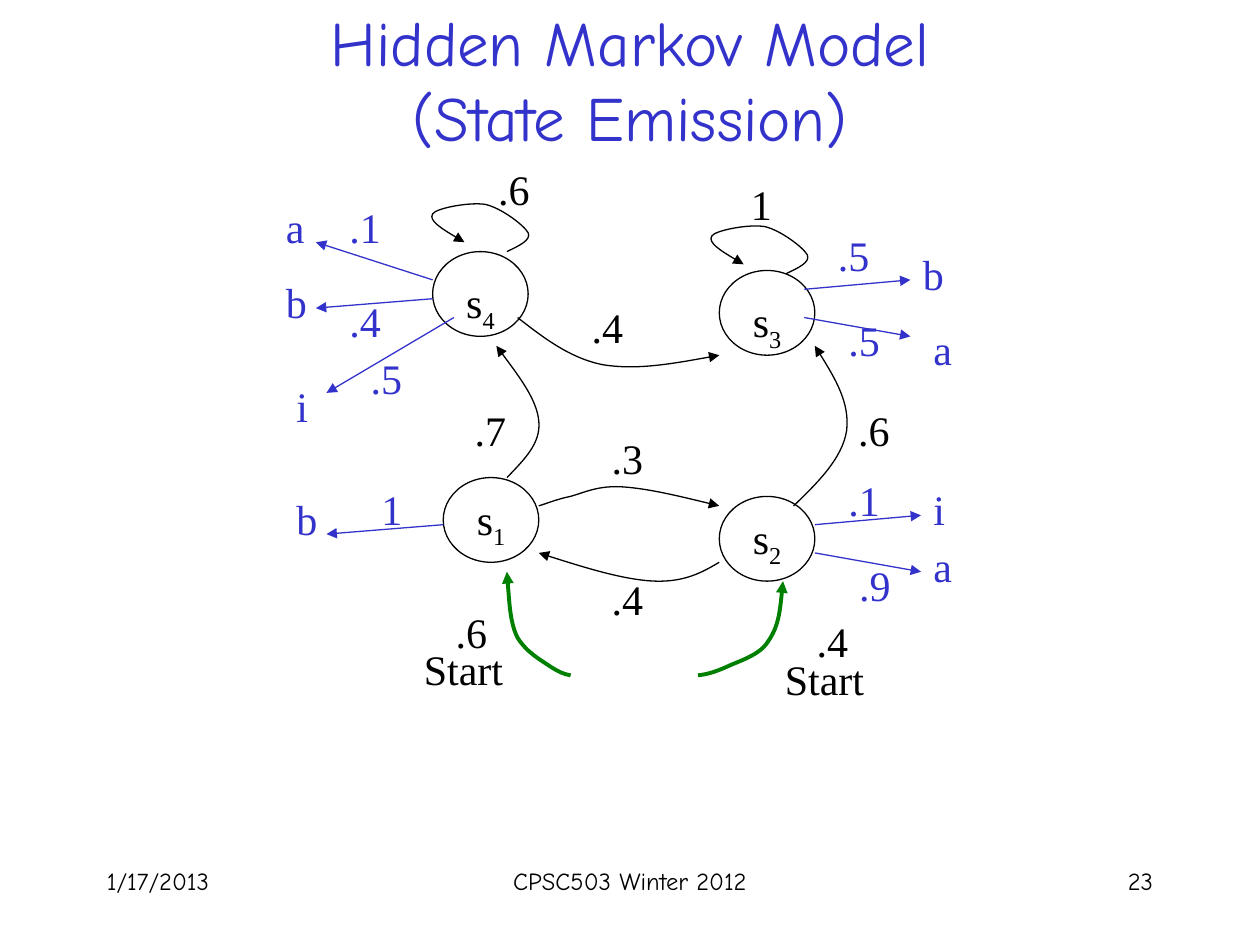
from lxml import etree
from pptx import Presentation
from pptx.dml.color import RGBColor
from pptx.enum import shapes, text
from pptx.oxml.ns import qn
from pptx.util import Inches, Pt

BLACK = RGBColor(0x00, 0x00, 0x00)
BLUE = RGBColor(0x33, 0x33, 0xCC)
GREEN = RGBColor(0x00, 0x80, 0x00)
WIDTH, HEIGHT = Inches(10), Inches(7.5)

# The diagram lies on a fine grid; all its positions are (column, row).
LEFT, TOP = Inches(2.17), Inches(1.25)
COLUMN, ROW = Inches(5.14) / 61, Inches(4.11) / 55
STATE_SPAN = 9
LABEL_WIDTHS = {"a": 0.35, "b": 0.37, "i": 0.3, "1": 0.37, "Start": 0.84}

# Number, ellipse corner, label corner
STATES = [
    ("4", (15, 10), (17, 12)),
    ("3", (42, 12), (44, 14)),
    ("1", (16, 34), (18, 35)),
    ("2", (42, 36), (44, 37)),
]

SELF_LOOP = [(22, 10), (23.1, 9.4), (24.3, 8.8), (24, 8), (23.6, 7.2),
             (21.5, 5.4), (20, 5), (18.5, 4.7), (15.3, 5.4), (15, 6),
             (14.6, 6.7), (16.3, 7.9), (18, 9)]

# Probability, label corner, start point and Bezier points
TRANSITIONS = [
    (".6", (20, 0), SELF_LOOP),
    ("1", (43.8, 1.6), [(x + 26.3, y + 2.35) for x, y in SELF_LOOP]),
    (".7", (17.8, 25.6), [(22, 34), (23.6, 32.1), (25.2, 30.4), (25, 28),
                          (24.8, 25.7), (22.9, 22.9), (21, 20)]),
    (".4", (28.8, 14.6), [(23, 17), (25.4, 19.1), (27.9, 21.3), (31, 22),
                          (34.2, 22.6), (38.1, 21.8), (42, 21)]),
    (".6", (53.9, 25.6), [(49, 37), (51.4, 34.4), (53.6, 31.9), (54, 29),
                          (54.3, 26.1), (52.7, 23), (51, 20)]),
    (".3", (30.7, 28.5), [(25, 37), (25.9, 36.7), (26.7, 36.3), (28, 36),
                          (29.3, 35.6), (30.6, 34.8), (33, 35),
                          (35.4, 35.2), (38.7, 36.1), (42, 37)]),
    (".4", (30.7, 43.5), [(42, 43), (40.5, 44), (38.8, 45.1), (36, 45),
                          (33.2, 44.9), (29.1, 43.5), (25, 42)]),
]

# Probability, its corner, corner of "Start", start point and Bezier points
STARTS = [
    (".6", (16, 47), (13, 51),
     [(28, 55), (27.4, 54.9), (26.8, 54.6), (26, 54), (25.1, 53.3),
      (23.9, 52.6), (23, 51), (22.3, 49.4), (22.2, 46.7), (22, 44)]),
    (".4", (50, 48), (47, 52),
     [(40, 55), (40.8, 54.9), (41.5, 54.7), (42.7, 54.1), (43.8, 53.5),
      (45.8, 52.9), (46.6, 51.4), (47.6, 49.8), (47.8, 47.4), (48, 45)]),
]

# Symbol, its corner, probability, its corner, arrow start, arrow end
EMISSIONS = [
    ("a", (0, 4), ".1", (6, 4), (15, 13), (4, 9)),
    ("b", (0, 12), ".4", (6, 14), (15, 15), (4, 16)),
    ("i", (1, 23), ".5", (8, 20), (17, 17), (5, 25)),
    ("b", (60, 9), ".5", (52, 7), (50, 14), (60, 13)),
    ("a", (61, 17), ".5", (53, 16), (50, 17), (60, 19)),
    ("b", (1, 35), "1", (9, 34), (16, 39), (5, 40)),
    ("i", (61, 34), ".1", (53, 33), (51, 39), (61, 38)),
    ("a", (61, 40), ".9", (54, 42), (51, 42), (61, 44)),
]

# Text, left share, width share, alignment
FOOTERS = [
    ("1/17/2013", 0.075, 0.21, text.PP_ALIGN.LEFT),
    ("CPSC503 Winter 2012", 0.34, 0.32, text.PP_ALIGN.CENTER),
    ("23", 0.715, 0.21, text.PP_ALIGN.RIGHT),
]


def grid_point(cell):
    column, row = cell
    return round(LEFT + column * COLUMN), round(TOP + row * ROW)


class DiagramPage:
    heading_font = "Comic Neue"
    label_font = "Times New Roman"
    thin, thick = Pt(0.75), Pt(2.25)

    def __init__(self, deck):
        self.page = deck.slides.add_slide(deck.slide_layouts[5])
        self.items = self.page.shapes

    def format_text(self, frame, font, size, color, align):
        for para in frame.paragraphs:
            para.alignment = align
            for span in para.runs:
                span.font.name, span.font.size = font, Pt(size)
                span.font.color.rgb = color

    def title(self, words):
        box = self.items.title
        box.left, box.top = round(0.075 * WIDTH), 0
        box.width, box.height = round(0.85 * WIDTH), round(HEIGHT / 6)
        frame = box.text_frame
        frame.text = words
        frame.auto_size = text.MSO_AUTO_SIZE.NONE
        frame.vertical_anchor = text.MSO_ANCHOR.MIDDLE
        self.format_text(frame, self.heading_font, 36, BLUE,
                         text.PP_ALIGN.CENTER)

    def footer(self, words, left, width, align):
        box = self.items.add_textbox(
            round(left * WIDTH), round(0.91 * HEIGHT),
            round(width * WIDTH), Inches(0.5))
        box.text_frame.word_wrap = True
        box.text_frame.text = words
        self.format_text(box.text_frame, self.heading_font, 14, BLACK, align)

    def label(self, words, cell, color=BLACK, subscript=""):
        width = Inches(LABEL_WIDTHS.get(words, 0.46))
        box = self.items.add_textbox(*grid_point(cell), width, Inches(0.45))
        frame = box.text_frame
        frame.word_wrap = False
        frame.text = words
        if subscript:
            span = frame.paragraphs[0].add_run()
            span.text = subscript
            span._r.get_or_add_rPr().set("baseline", "-25000")
        self.format_text(frame, self.label_font, 24, color,
                         text.PP_ALIGN.LEFT)

    def state(self, number, cell, label_cell):
        circle = self.items.add_shape(
            shapes.MSO_SHAPE.OVAL, *grid_point(cell),
            round(STATE_SPAN * COLUMN), round(STATE_SPAN * ROW))
        circle.shadow.inherit = False
        circle.fill.background()
        circle.line.color.rgb, circle.line.width = BLACK, self.thin
        self.label("s", label_cell, subscript=number)

    def arrowhead(self, line, color, width):
        line.color.rgb, line.width = color, width
        etree.SubElement(line._get_or_add_ln(), qn("a:tailEnd"),
                         type="triangle")

    def arrow(self, start, end, color):
        link = self.items.add_connector(
            shapes.MSO_CONNECTOR.STRAIGHT, *grid_point(start),
            *grid_point(end))
        self.arrowhead(link.line, color, self.thin)
        etree.SubElement(link._element.spPr, qn("a:effectLst"))

    def curve(self, cells, color, width):
        """Draw an open Bezier curve that ends in an arrowhead."""
        start, *others = [grid_point(cell) for cell in cells]
        builder = self.items.build_freeform(*start)
        builder.add_line_segments(others, close=False)
        bend = builder.convert_to_shape()
        outline = bend._element.xpath(".//a:path")[0]
        segments = outline.findall(qn("a:lnTo"))
        for first in range(0, len(segments), 3):
            cubic = etree.SubElement(outline, qn("a:cubicBezTo"))
            for segment in segments[first:first + 3]:
                cubic.append(segment[0])
                outline.remove(segment)
        bend.shadow.inherit = False
        bend.fill.background()
        self.arrowhead(bend.line, color, width)


def main():
    deck = Presentation()
    deck.slide_width, deck.slide_height = WIDTH, HEIGHT
    diagram = DiagramPage(deck)
    diagram.title("Hidden Markov Model\v(State Emission)")
    for footer in FOOTERS:
        diagram.footer(*footer)
    for state in STATES:
        diagram.state(*state)
    for chance, cell, points in TRANSITIONS:
        diagram.curve(points, BLACK, diagram.thin)
        diagram.label(chance, cell)
    for chance, cell, start_cell, points in STARTS:
        diagram.curve(points, GREEN, diagram.thick)
        diagram.label(chance, cell)
        diagram.label("Start", start_cell)
    for symbol, symbol_cell, chance, cell, start, end in EMISSIONS:
        diagram.arrow(start, end, BLUE)
        diagram.label(symbol, symbol_cell, BLUE)
        diagram.label(chance, cell, BLUE)
    deck.save("out.pptx")


if __name__ == "__main__":
    main()
